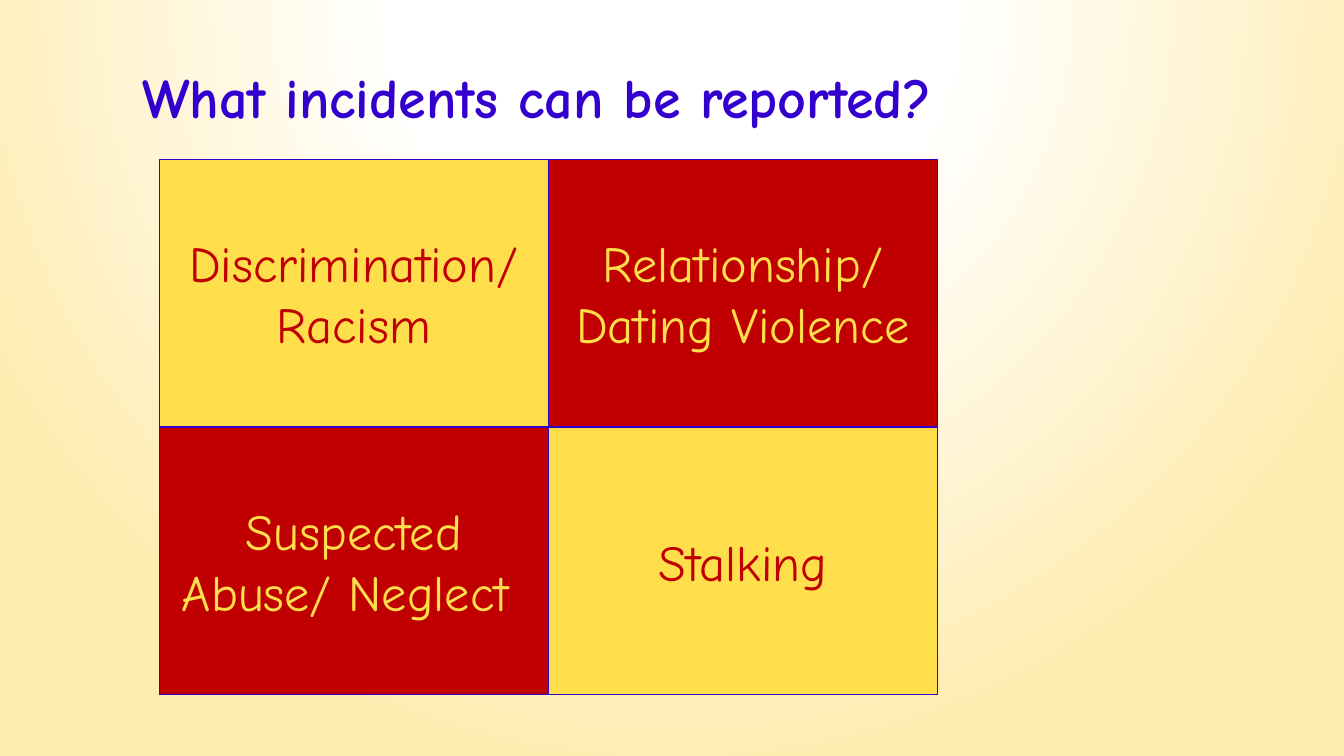
from dataclasses import dataclass

from lxml.etree import SubElement
from pptx import Presentation
from pptx.dml.color import RGBColor
from pptx.enum.shapes import MSO_SHAPE
from pptx.enum.text import MSO_ANCHOR, PP_ALIGN
from pptx.oxml.ns import qn
from pptx.util import Inches, Pt


@dataclass(frozen=True)
class Theme:
    font: str = "Comic Neue"
    blue: str = "3300CC"
    title: str = "3300CD"
    gold: str = "FFDE4B"
    red: str = "C00000"
    glow: tuple = ((0, "FFFFFF"), (35, "FFFFFF"), (100, "FFECB1"))
    head: int = 40
    body: int = 36
    line: float = 0.75


@dataclass(frozen=True)
class Grid:
    left: float = 1.58
    top: float = 1.58
    wide: float = 3.86
    high: float = 2.65
    step: float = 2.66

    def cell(self, row, col):
        spots = (self.left + col * self.wide, self.top + row * self.step,
                 self.wide, self.high)
        return [Inches(spot) for spot in spots]


THEME = Theme()
GRID = Grid()
TILES = (
    (("Discrimination/ Racism",), ("Relationship/", "Dating Violence")),
    (("Suspected Abuse/ Neglect ",), ("Stalking",)),
)


def paint_back(slide):
    """Fill the background with a round glow centred above the slide."""
    fill = slide.background.fill
    fill.gradient()
    grad = slide.background._cSld.find(".//" + qn("a:gradFill"))
    for child in list(grad):
        grad.remove(child)
    stops = SubElement(grad, qn("a:gsLst"))
    for share, color in THEME.glow:
        stop = SubElement(stops, qn("a:gs"), pos=str(share * 1000))
        SubElement(stop, qn("a:srgbClr"), val=color)
    glow = SubElement(grad, qn("a:path"), path="circle")
    SubElement(glow, qn("a:fillToRect"),
               l="50000", t="-80000", r="50000", b="180000")


def write(frame, lines, size, color, align, bold=False):
    frame.word_wrap = True
    frame.vertical_anchor = MSO_ANCHOR.MIDDLE
    for rank, line in enumerate(lines):
        para = frame.add_paragraph() if rank else frame.paragraphs[0]
        para.alignment = align
        run = para.add_run()
        run.text = line
        run.font.name = THEME.font
        run.font.size = Pt(size)
        run.font.bold = bold
        run.font.color.rgb = RGBColor.from_string(color)


def add_title(slide, text):
    box = slide.shapes.add_textbox(
        Inches(1), Inches(0.33), Inches(9.45), Inches(1.25))
    box.text_frame.margin_left = Inches(0.41)
    write(box.text_frame, [text], THEME.head, THEME.title, PP_ALIGN.LEFT, True)


def add_tile(slide, row, col, lines):
    """Add one tile; gold and red swap as on a chessboard."""
    fill, ink = THEME.gold, THEME.red
    if (row + col) % 2:
        fill, ink = ink, fill
    tile = slide.shapes.add_shape(MSO_SHAPE.RECTANGLE, *GRID.cell(row, col))
    tile.shadow.inherit = False
    tile.fill.solid()
    tile.fill.fore_color.rgb = RGBColor.from_string(fill)
    tile.line.color.rgb = RGBColor.from_string(THEME.blue)
    tile.line.width = Pt(THEME.line)
    write(tile.text_frame, lines, THEME.body, ink, PP_ALIGN.CENTER)


def main():
    deck = Presentation()
    deck.slide_width, deck.slide_height = Inches(13.33), Inches(7.5)
    slide = deck.slides.add_slide(deck.slide_layouts[6])
    paint_back(slide)
    add_title(slide, "What incidents can be reported?")
    for row, tiles in enumerate(TILES):
        for col, lines in enumerate(tiles):
            add_tile(slide, row, col, lines)
    deck.save("out.pptx")


if __name__ == "__main__":
    main()
